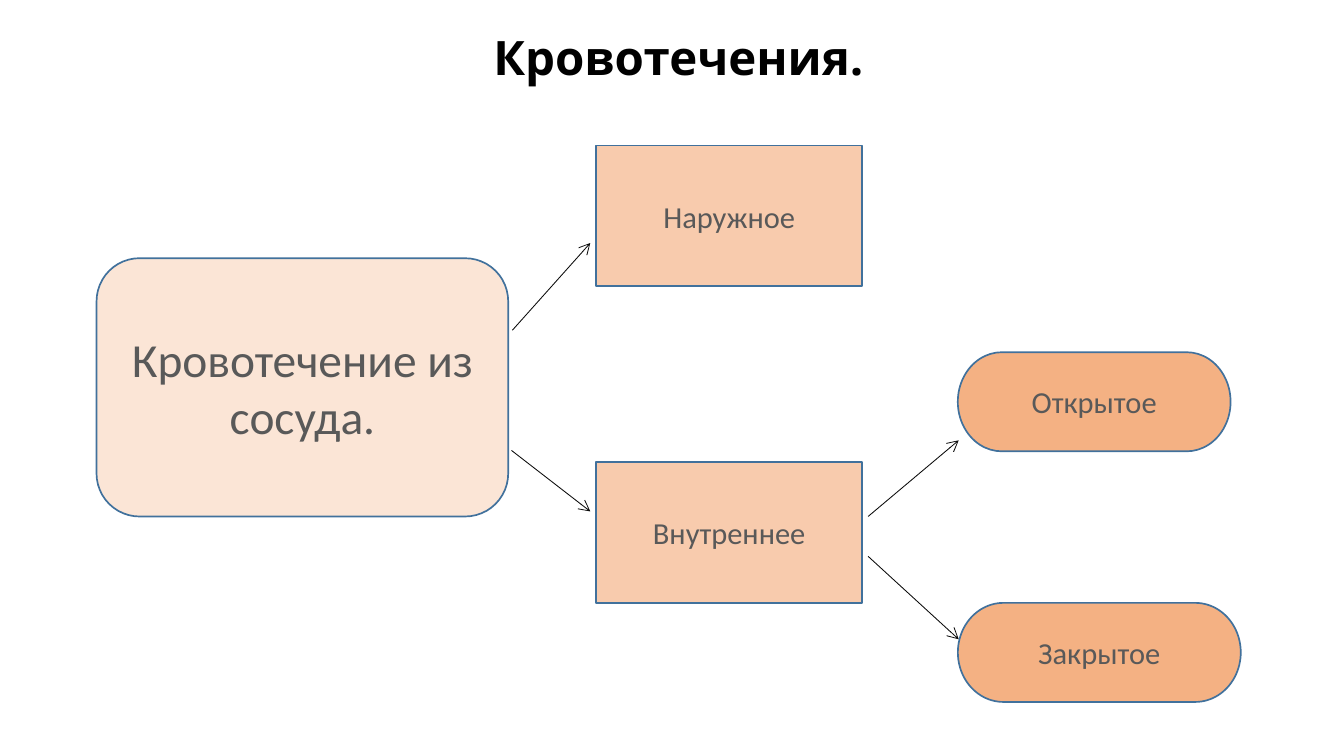
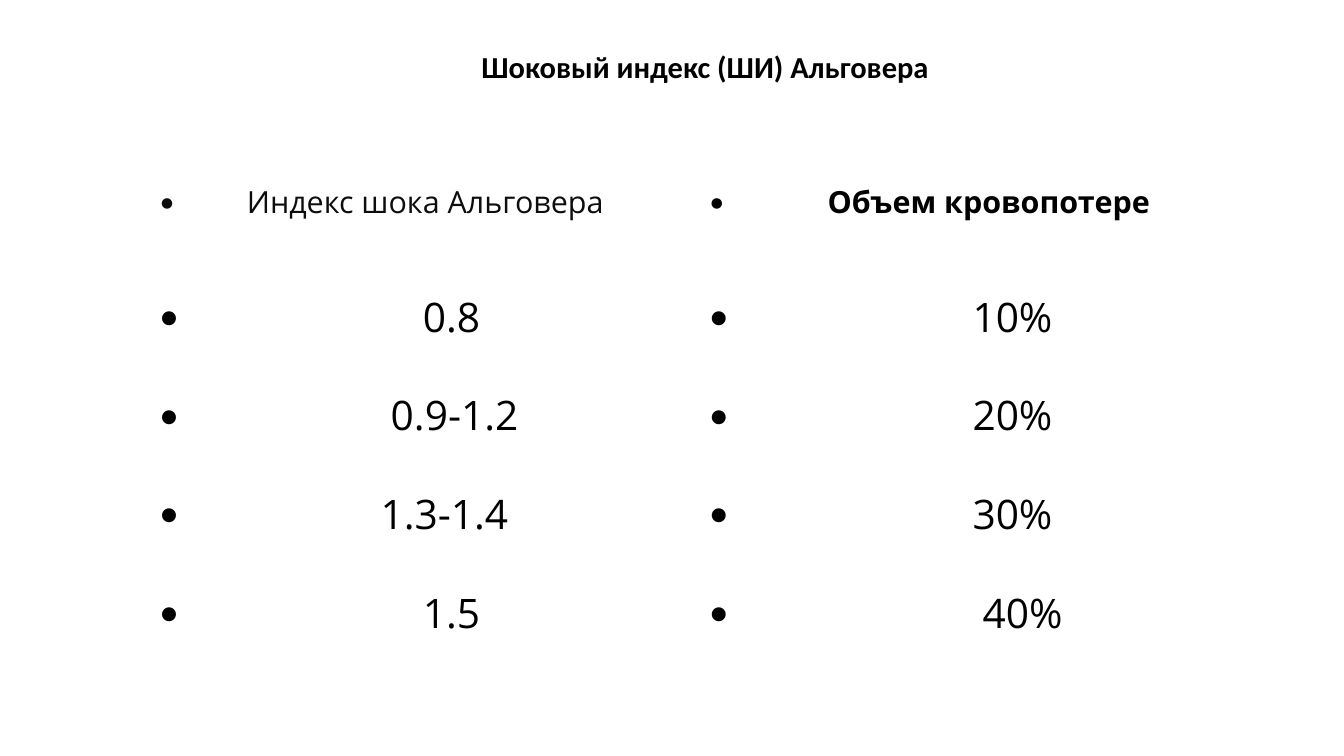
import dataclasses
import pptx
import pptx.util
import pptx.dml.color
import pptx.enum.shapes
import pptx.enum.text
import pptx.oxml
import pptx.oxml.ns

Pt = pptx.util.Pt
Rgb = pptx.dml.color.RGBColor.from_string
Kind = pptx.enum.shapes.MSO_SHAPE
Align = pptx.enum.text.PP_ALIGN
Anchor = pptx.enum.text.MSO_ANCHOR
ns = pptx.oxml.ns.nsdecls("a")


@dataclasses.dataclass(frozen=True)
class Theme:
    sans: str = "Open Sans"
    body: str = "Calibri"
    ink: str = "000000"
    soft: str = "0D0D0D"
    gray: str = "595959"
    edge: str = "41719C"
    pale: str = "FBE5D6"
    peach: str = "F8CBAD"
    warm: str = "F4B183"
    large: int = 28
    mid: int = 24
    small: int = 18


theme = Theme()


def write(para, text, face, size, color, bold=False):
    run = para.add_run()
    run.text = text
    run.font.name = face
    run.font.size = Pt(size)
    run.font.bold = bold
    run.font.color.rgb = Rgb(color)


def start(text, face, size, box):
    slide = deck.slides.add_slide(deck.slide_layouts[5])
    title = slide.shapes.title
    title.left, title.top, title.width, title.height = map(Pt, box)
    frame = title.text_frame
    frame.auto_size = pptx.enum.text.MSO_AUTO_SIZE.NONE
    frame.word_wrap = True
    frame.vertical_anchor = Anchor.MIDDLE
    para = frame.paragraphs[0]
    para.alignment = Align.LEFT
    write(para, text, face, size, theme.ink, True)
    return slide


deck = pptx.Presentation()
deck.slide_width = Pt(793.44)
deck.slide_height = Pt(446.4)

slide = start("Кровотечения.", theme.sans, theme.large, (284, 4, 392, 59))

nodes = [
    ("Кровотечение из сосуда.", Kind.ROUNDED_RECTANGLE, theme.pale, theme.large, (57, 152.5, 243, 152.5)),
    ("Внутреннее", Kind.RECTANGLE, theme.peach, theme.small, (352, 273, 157, 83)),
    ("Наружное", Kind.RECTANGLE, theme.peach, theme.small, (352, 86, 157, 83)),
    ("Закрытое", Kind.FLOWCHART_TERMINATOR, theme.warm, theme.small, (565.5, 356, 167, 58.5)),
    ("Открытое", Kind.FLOWCHART_TERMINATOR, theme.warm, theme.small, (565.5, 208, 161, 58.5)),
]
for text, kind, fill, size, box in nodes:
    node = slide.shapes.add_shape(kind, *map(Pt, box))
    node.shadow.inherit = False
    node.fill.solid()
    node.fill.fore_color.rgb = Rgb(fill)
    node.line.color.rgb = Rgb(theme.edge)
    node.line.width = Pt(1)
    frame = node.text_frame
    frame.word_wrap = True
    frame.vertical_anchor = Anchor.MIDDLE
    para = frame.paragraphs[0]
    para.alignment = Align.CENTER
    write(para, text, theme.body, size, theme.gray)

links = [
    (302, 266, 348.5, 302),
    (512.5, 305, 566, 260),
    (302.5, 195, 348.5, 143.5),
    (512.5, 328.5, 566, 377.5),
]
for ends in links:
    link = slide.shapes.add_connector(pptx.enum.shapes.MSO_CONNECTOR.STRAIGHT, *map(Pt, ends))
    link.line.color.rgb = Rgb(theme.soft)
    link.line.width = Pt(0.5)
    link.line._get_or_add_ln().append(pptx.oxml.parse_xml(f'<a:tailEnd {ns} type="arrow"/>'))
    link._element.spPr.append(pptx.oxml.parse_xml(f"<a:effectLst {ns}/>"))

slide = start("Шоковый индекс (ШИ) Альговера", theme.body, theme.small, (277, 24.5, 316, 29))

rows = [
    (("Индекс шока Альговера", 50.5), ("Объем кровопотере", 69)),
    (("0.8", 154.5), ("10%", 154.5)),
    (("0.9-1.2", 135.5), ("20%", 154.5)),
    (("1.3-1.4", 129.5), ("30%", 154.5)),
    (("1.5", 154.5), ("40%", 160.5)),
]
table = slide.shapes.add_table(len(rows), 2, Pt(88), Pt(103.5), Pt(649), Pt(296)).table
table.first_row = False
table.horz_banding = False
for col in table.columns:
    col.width = Pt(324.5)
for r, row in enumerate(rows):
    head = r == 0
    table.rows[r].height = Pt(63.5 if head else 58.25)
    for c, (text, indent) in enumerate(row):
        cell = table.cell(r, c)
        cell.fill.background()
        para = cell.text_frame.paragraphs[0]
        props = para._p.get_or_add_pPr()
        props.set("marL", str(Pt(indent)))
        props.set("indent", str(-Pt(indent)))
        for part in ('buSzPct {} val="45000"', f'buFont {{}} typeface="{theme.sans}"', 'buChar {} char="●"'):
            props.append(pptx.oxml.parse_xml(f"<a:{part.format(ns)}/>"))
        size = theme.small if head else theme.mid
        color = theme.soft if head and c == 0 else theme.ink
        write(para, text, theme.sans, size, color, head and c == 1)

deck.save("out.pptx")
